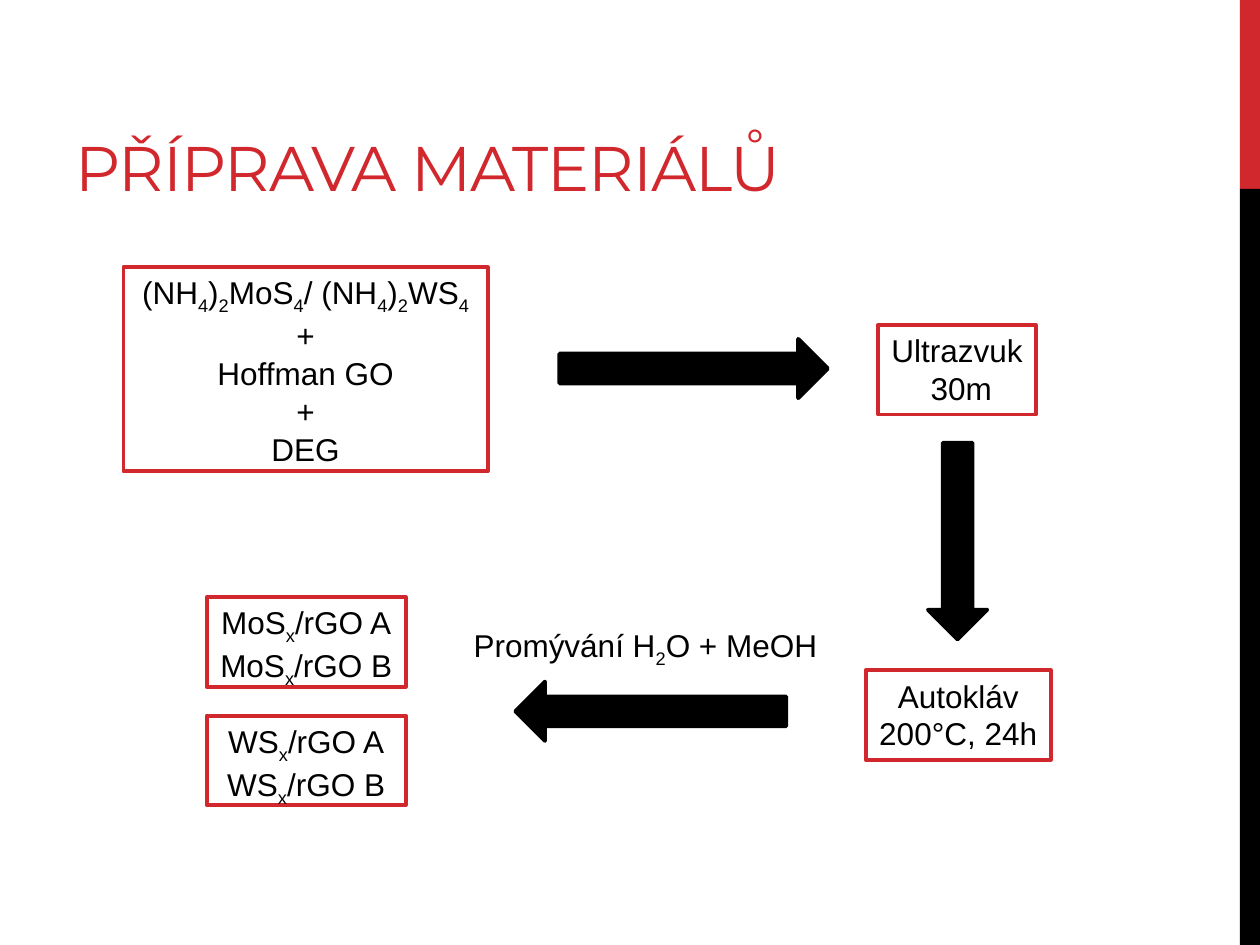
from dataclasses import dataclass

from pptx import Presentation
from pptx.dml.color import RGBColor
from pptx.enum.shapes import MSO_SHAPE
from pptx.enum.text import MSO_ANCHOR, MSO_AUTO_SIZE, PP_ALIGN
from pptx.shapes.autoshape import Shape
from pptx.slide import Slide
from pptx.util import Inches, Pt

RED = RGBColor(0xD1, 0x28, 0x2E)
BLACK = RGBColor(0x00, 0x00, 0x00)
WHITE = RGBColor(0xFF, 0xFF, 0xFF)
SUBSCRIPT_MARK = "~"


@dataclass(frozen=True)
class Area:
    left: float
    top: float
    width: float
    height: float


@dataclass(frozen=True)
class Step:
    area: Area
    lines: tuple[str, ...]
    fill: RGBColor | None = None
    wrap: bool = False


@dataclass(frozen=True)
class Arrow:
    area: Area
    rotation: int


STEPS = (
    Step(
        Area(0.98, 2.12, 2.89, 1.62),
        ("(NH~4~)~2~MoS~4~/ (NH~4~)~2~WS~4~", "+", "Hoffman GO", "+", "DEG"),
        fill=WHITE,
    ),
    Step(Area(6.97, 2.58, 1.25, 0.71), ("Ultrazvuk", " 30m")),
    Step(Area(6.87, 5.32, 1.47, 0.71), ("Autokláv", "200°C, 24h")),
    Step(Area(1.64, 4.74, 1.58, 0.71), ("MoS~x~/rGO A", "MoS~x~/rGO B")),
    Step(Area(1.64, 5.68, 1.58, 0.71), ("WS~x~/rGO A", "WS~x~/rGO B"), wrap=True),
)
ARROWS = (
    Arrow(Area(4.44, 2.69, 2.13, 0.47), 0),
    Arrow(Area(6.82, 4.06, 1.56, 0.47), 90),
    Arrow(Area(4.09, 5.41, 2.15, 0.47), 180),
)


def place(area: Area) -> tuple[Inches, Inches, Inches, Inches]:
    return (
        Inches(area.left),
        Inches(area.top),
        Inches(area.width),
        Inches(area.height),
    )


def add_figure(
    slide: Slide,
    kind: MSO_SHAPE,
    area: Area,
    fill: RGBColor | None,
    outline: RGBColor | None = None,
) -> Shape:
    figure = slide.shapes.add_shape(kind, *place(area))
    figure.shadow.inherit = False
    if fill is None:
        figure.fill.background()
    else:
        figure.fill.solid()
        figure.fill.fore_color.rgb = fill
    if outline is None:
        figure.line.fill.background()
    else:
        figure.line.color.rgb = outline
        figure.line.width = Pt(2.25)
    return figure


def write_lines(
    holder: Shape, lines: tuple[str, ...], align: PP_ALIGN, wrap: bool = False
) -> None:
    frame = holder.text_frame
    frame.word_wrap = wrap
    frame.auto_size = MSO_AUTO_SIZE.SHAPE_TO_FIT_TEXT
    frame.vertical_anchor = MSO_ANCHOR.TOP
    for number, line in enumerate(lines):
        paragraph = frame.add_paragraph() if number else frame.paragraphs[0]
        paragraph.alignment = align
        for position, part in enumerate(line.split(SUBSCRIPT_MARK)):
            if not part:
                continue
            run = paragraph.add_run()
            run.text = part
            run.font.name = "Arial"
            run.font.size = Pt(18)
            run.font.color.rgb = BLACK
            if position % 2:
                run._r.get_or_add_rPr().set("baseline", "-25000")


def add_title(slide: Slide, wording: str) -> None:
    title = slide.shapes.add_textbox(*place(Area(0.5, 0.17, 6.33, 1.5)))
    frame = title.text_frame
    frame.word_wrap = True
    frame.vertical_anchor = MSO_ANCHOR.BOTTOM
    run = frame.paragraphs[0].add_run()
    run.text = wording
    run.font.name = "Montserrat"
    run.font.size = Pt(36)
    run.font.color.rgb = RED
    run._r.get_or_add_rPr().set("spc", "-60")


def add_step(slide: Slide, step: Step) -> None:
    box = add_figure(slide, MSO_SHAPE.RECTANGLE, step.area, step.fill, RED)
    write_lines(box, step.lines, PP_ALIGN.CENTER, step.wrap)


def add_arrow(slide: Slide, arrow: Arrow) -> None:
    figure = add_figure(slide, MSO_SHAPE.RIGHT_ARROW, arrow.area, BLACK, BLACK)
    figure.rotation = arrow.rotation


def main() -> None:
    presentation = Presentation()
    presentation.slide_width = Inches(10)
    presentation.slide_height = Inches(7.5)
    slide = presentation.slides.add_slide(presentation.slide_layouts[6])

    add_figure(slide, MSO_SHAPE.RECTANGLE, Area(9.84, 0, 0.16, 1.5), RED)
    add_figure(slide, MSO_SHAPE.RECTANGLE, Area(9.84, 1.5, 0.16, 6), BLACK)
    add_title(slide, "PŘÍPRAVA MATERIÁLŮ")
    for arrow in ARROWS:
        add_arrow(slide, arrow)
    for step in STEPS:
        add_step(slide, step)
    washing = slide.shapes.add_textbox(*place(Area(3.66, 4.92, 3.01, 0.4)))
    write_lines(washing, ("Promývání H~2~O + MeOH",), PP_ALIGN.LEFT)

    presentation.save("out.pptx")


if __name__ == "__main__":
    main()
